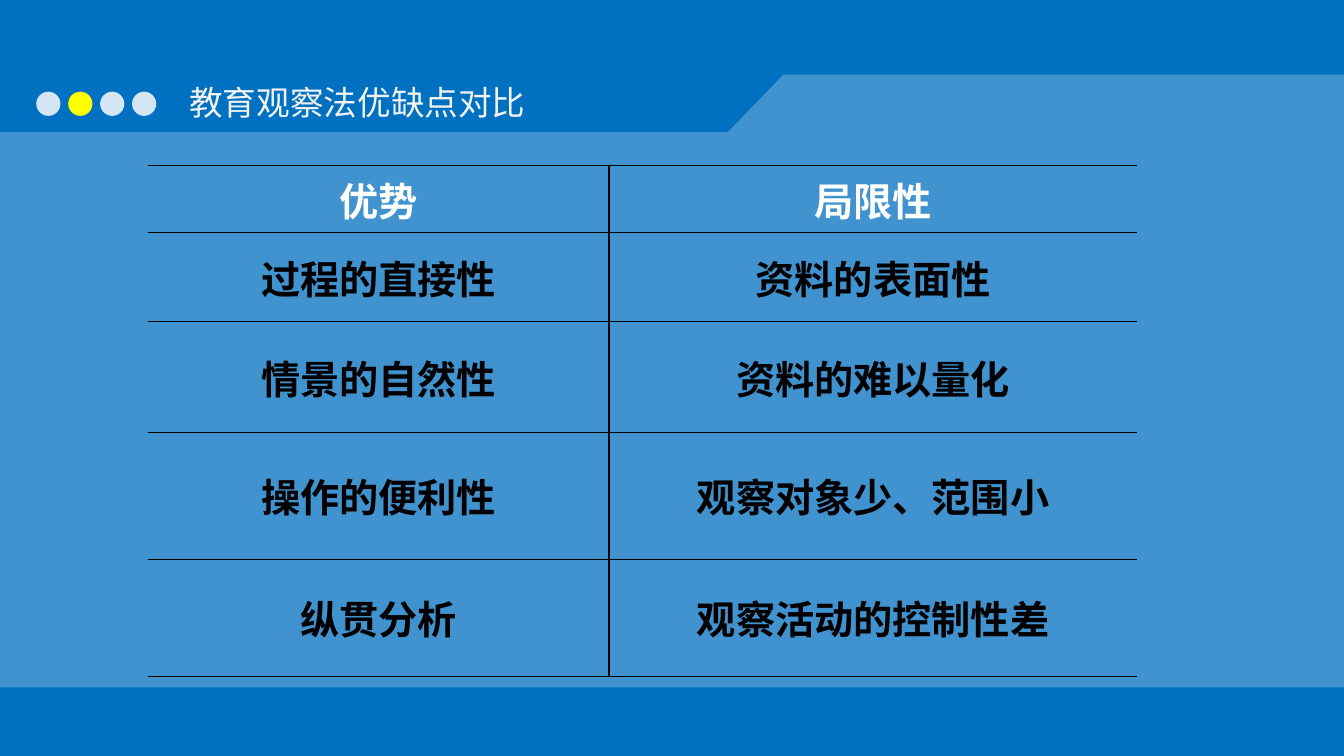
from lxml import etree
from pptx import Presentation
from pptx.dml.color import RGBColor
from pptx.enum import shapes, text
from pptx.oxml.ns import qn
from pptx.util import Inches, Pt

FONT = "Noto Sans CJK SC"


def paint(fill, color, opacity=100):
    fill.solid()
    fill.fore_color.rgb = RGBColor.from_string(color)
    if opacity < 100:
        color_node = fill._xPr.find(qn("a:solidFill"))[0]
        etree.SubElement(color_node, qn("a:alpha"), val=str(opacity * 1000))


def style(paragraph, size, color, bold=False):
    paragraph.font.name = FONT
    paragraph.font.size = Pt(size)
    paragraph.font.bold = bold
    paint(paragraph.font.fill, color)
    # Chinese characters take the East Asian typeface
    properties = paragraph._p.pPr.find(qn("a:defRPr"))
    etree.SubElement(properties, qn("a:ea"), typeface=FONT)


presentation = Presentation()
presentation.slide_width = Inches(13.33)
presentation.slide_height = Inches(7.5)
slide = presentation.slides.add_slide(presentation.slide_layouts[6])
paint(slide.background.fill, "0070C0")

# Pale content panel with a slanted tab
outline = [(0, 1.31), (7.22, 1.31), (7.77, 0.74), (13.33, 0.74), (13.33, 6.82), (0, 6.82)]
points = [(Inches(x), Inches(y)) for x, y in outline]
builder = slide.shapes.build_freeform(*points[0], scale=1.0)
builder.add_line_segments(points[1:], close=True)
panel = builder.convert_to_shape()
panel.shadow.inherit = False
paint(panel.fill, "FFFFFF", 25)
panel.line.fill.background()

# Progress dots, the second one active
for index in range(4):
    left = 0.36 + index * 0.95 / 3
    dot = slide.shapes.add_shape(
        shapes.MSO_SHAPE.OVAL, Inches(left), Inches(0.91), Inches(0.24), Inches(0.24))
    dot.shadow.inherit = False
    dot.line.fill.background()
    if index == 1:
        paint(dot.fill, "FFFF00")
    else:
        paint(dot.fill, "FFFFFF", 83)

# Title
title = slide.shapes.add_textbox(Inches(1.78), Inches(0.76), Inches(3.94), Inches(0.5))
title.text_frame.word_wrap = True
title.text_frame.text = "教育观察法优缺点对比"
style(title.text_frame.paragraphs[0], 24, "F2F2F2")

# Comparison table
rows = [
    ("优势", "局限性"),
    ("过程的直接性", "资料的表面性"),
    ("情景的自然性", "资料的难以量化"),
    ("操作的便利性", "观察对象少、范围小"),
    ("纵贯分析", "观察活动的控制性差"),
]
frame = slide.shapes.add_table(
    len(rows), 2, Inches(1.47), Inches(1.64), Inches(9.81), Inches(5.07))
table = frame.table
table.first_row = False
table.horz_banding = False
# The "No Style, No Grid" table style
table._tbl.tblPr.find(qn("a:tableStyleId")).text = "{2D5ABB26-0587-4C30-8999-92F81FD0307C}"
for column, width in zip(table.columns, (4.57, 5.24)):
    column.width = Inches(width)
for row, height in zip(table.rows, (0.67, 0.88, 1.1, 1.26, 1.16)):
    row.height = Inches(height)

for row_index, labels in enumerate(rows):
    for column_index, label in enumerate(labels):
        cell = table.cell(row_index, column_index)
        cell.text = label
        cell.vertical_anchor = text.MSO_ANCHOR.MIDDLE
        cell.fill.background()
        paragraph = cell.text_frame.paragraphs[0]
        paragraph.alignment = text.PP_ALIGN.CENTER
        style(paragraph, 28, "FFFFFF" if row_index == 0 else "000000", bold=True)

        # Horizontal rules and the inner divider; outer sides stay open
        inner_side = "a:lnR" if column_index == 0 else "a:lnL"
        properties = cell._tc.get_or_add_tcPr()
        for position, side in enumerate((inner_side, "a:lnT", "a:lnB")):
            border = etree.Element(qn(side), w=str(Pt(1)))
            border_fill = etree.SubElement(border, qn("a:solidFill"))
            etree.SubElement(border_fill, qn("a:srgbClr"), val="000000")
            properties.insert(position, border)

presentation.save("out.pptx")
